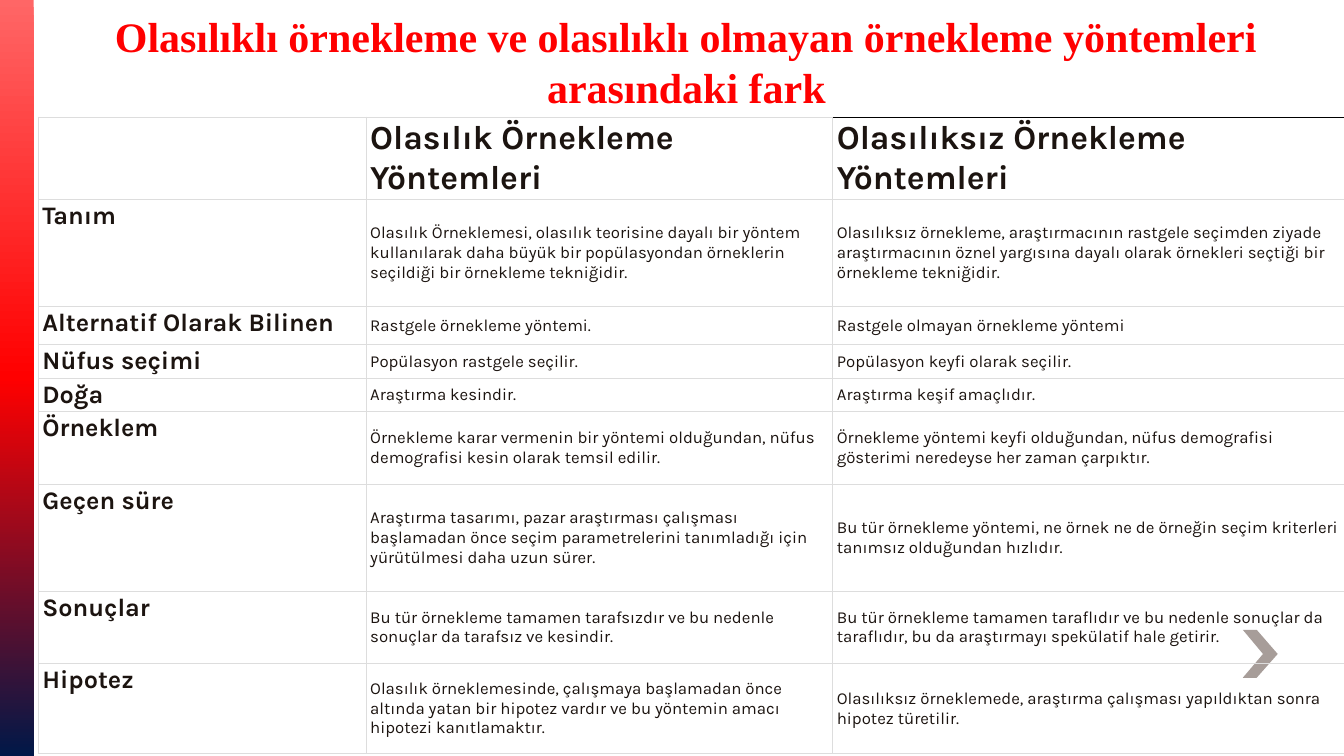
import copy
import pptx
import pptx.dml.color
import pptx.enum.shapes
import pptx.enum.text
import pptx.oxml
import pptx.oxml.ns
import pptx.util

Cm = pptx.util.Cm
Pt = pptx.util.Pt
RGBColor = pptx.dml.color.RGBColor
ANCHOR = pptx.enum.text.MSO_ANCHOR
ALIGN = pptx.enum.text.PP_ALIGN

RED = RGBColor(0xFF, 0x00, 0x00)
LIGHT_RED = RGBColor(0xFF, 0x66, 0x66)
NAVY = RGBColor(0x00, 0x18, 0x48)
INK = RGBColor(0x1C, 0x14, 0x10)
TAUPE = RGBColor(0xA7, 0x9D, 0x99)
GRID = RGBColor(0xDD, 0xDD, 0xDD)
BLACK = RGBColor(0x00, 0x00, 0x00)


def write(frame, text, size, font="Karla", color=INK, bold=False, align=ALIGN.LEFT):
    para = frame.paragraphs[0]
    para.alignment = align
    span = para.add_run()
    span.text = text
    span.font.name = font
    span.font.size = Pt(size)
    span.font.bold = bold
    span.font.color.rgb = color


def add_border(cell, side, color):
    cell._tc.get_or_add_tcPr().append(pptx.oxml.parse_xml(
        f'<a:ln{side} {pptx.oxml.ns.nsdecls("a")} w="{Pt(0.75)}">'
        f'<a:solidFill><a:srgbClr val="{color}"/></a:solidFill></a:ln{side}>'))


deck = pptx.Presentation()
deck.slide_width = Cm(33.87)
deck.slide_height = Cm(19.05)
page = deck.slides.add_slide(deck.slide_layouts[5])

side_bar = page.shapes.add_shape(
    pptx.enum.shapes.MSO_SHAPE.RECTANGLE, 0, 0, Cm(0.85), deck.slide_height)
side_bar.shadow.inherit = False
side_bar.line.fill.background()
side_bar.fill.gradient()
side_bar.fill.gradient_angle = 270
stop_list = side_bar.element.spPr.find(".//" + pptx.oxml.ns.qn("a:gsLst"))
stop_list.append(copy.deepcopy(stop_list[0]))
bar_stops = [(0, LIGHT_RED), (0.5, RED), (1, NAVY)]
for stop, (position, color) in zip(side_bar.fill.gradient_stops, bar_stops):
    stop.position = position
    stop.color.rgb = color

outline = page.shapes.build_freeform(Cm(31.67), Cm(15.87))
outline.add_line_segments([
    (Cm(x), Cm(y)) for x, y in
    [(31.32, 15.87), (31.83, 16.48), (31.32, 17.08), (31.67, 17.08), (32.2, 16.48)]])
chevron = outline.convert_to_shape()
chevron.shadow.inherit = False
chevron.fill.solid()
chevron.fill.fore_color.rgb = TAUPE
chevron.line.fill.background()

title = page.shapes.title
title.left, title.top, title.width, title.height = Cm(0.74), Cm(0.48), Cm(33.12), Cm(2.46)
title.text_frame.word_wrap = True
title.text_frame.auto_size = pptx.enum.text.MSO_AUTO_SIZE.NONE
title.text_frame.vertical_anchor = ANCHOR.BOTTOM
write(title.text_frame,
      "Olasılıklı örnekleme ve olasılıklı olmayan örnekleme yöntemleri arasındaki fark",
      30, font="Times New Roman", color=RED, bold=True, align=ALIGN.CENTER)

comparison = [
    ("", "Olasılık Örnekleme Yöntemleri", "Olasılıksız Örnekleme Yöntemleri"),
    ("Tanım",
     "Olasılık Örneklemesi, olasılık teorisine dayalı bir yöntem kullanılarak daha büyük "
     "bir popülasyondan örneklerin seçildiği bir örnekleme tekniğidir.",
     "Olasılıksız örnekleme, araştırmacının rastgele seçimden ziyade araştırmacının öznel "
     "yargısına dayalı olarak örnekleri seçtiği bir örnekleme tekniğidir."),
    ("Alternatif Olarak Bilinen",
     "Rastgele örnekleme yöntemi.",
     "Rastgele olmayan örnekleme yöntemi"),
    ("Nüfus seçimi",
     "Popülasyon rastgele seçilir.",
     "Popülasyon keyfi olarak seçilir."),
    ("Doğa", "Araştırma kesindir.", "Araştırma keşif amaçlıdır."),
    ("Örneklem",
     "Örnekleme karar vermenin bir yöntemi olduğundan, nüfus demografisi kesin olarak "
     "temsil edilir.",
     "Örnekleme yöntemi keyfi olduğundan, nüfus demografisi gösterimi neredeyse her zaman "
     "çarpıktır."),
    ("Geçen süre",
     "Araştırma tasarımı, pazar araştırması çalışması başlamadan önce seçim parametrelerini "
     "tanımladığı için yürütülmesi daha uzun sürer.",
     "Bu tür örnekleme yöntemi, ne örnek ne de örneğin seçim kriterleri tanımsız olduğundan "
     "hızlıdır."),
    ("Sonuçlar",
     "Bu tür örnekleme tamamen tarafsızdır ve bu nedenle sonuçlar da tarafsız ve kesindir.",
     "Bu tür örnekleme tamamen taraflıdır ve bu nedenle sonuçlar da taraflıdır, bu da "
     "araştırmayı spekülatif hale getirir."),
    ("Hipotez",
     "Olasılık örneklemesinde, çalışmaya başlamadan önce altında yatan bir hipotez vardır "
     "ve bu yöntemin amacı hipotezi kanıtlamaktır.",
     "Olasılıksız örneklemede, araştırma çalışması yapıldıktan sonra hipotez türetilir."),
]
column_widths = [8.26, 11.76, 12.88]
row_heights = [2.01, 2.69, 0.97, 0.81, 0.81, 1.83, 2.69, 1.83, 2.26]

table = page.shapes.add_table(
    len(row_heights), len(column_widths), Cm(0.97), Cm(2.95),
    Cm(sum(column_widths)), Cm(sum(row_heights))).table
table.first_row = False
table.horz_banding = False
for column, width in zip(table.columns, column_widths):
    column.width = Cm(width)
for row, height in zip(table.rows, row_heights):
    row.height = Cm(height)

for row_index, texts in enumerate(comparison):
    for column_index, text in enumerate(texts):
        cell = table.cell(row_index, column_index)
        cell.margin_left = cell.margin_right = Cm(0.1)
        cell.margin_top = cell.margin_bottom = Cm(0.05)
        cell.vertical_anchor = ANCHOR.MIDDLE if column_index else ANCHOR.TOP
        last_header = row_index == 0 and column_index == 2
        for side in "LRTB":
            add_border(cell, side, BLACK if last_header and side in "RT" else GRID)
        cell.fill.background()
        if text:
            size = 24 if row_index == 0 else 12 if column_index else 18
            write(cell.text_frame, text, size, bold=size > 12)

deck.save("out.pptx")
